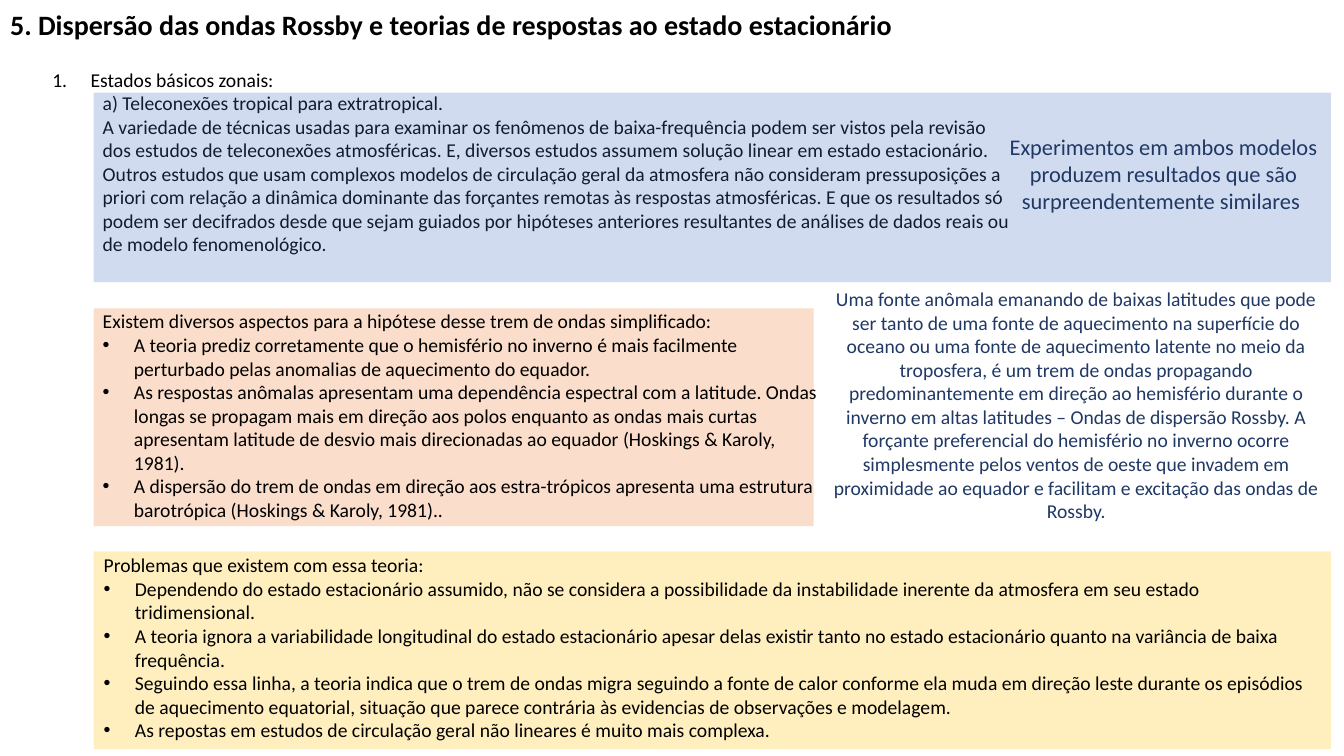
import pptx
import pptx.util
import pptx.dml.color
import pptx.enum.shapes
import pptx.enum.text
import pptx.oxml
import pptx.oxml.ns

SCALE = 9144
BLACK = "000000"
NAVY = "203864"
LEFT = pptx.enum.text.PP_ALIGN.LEFT
CENTER = pptx.enum.text.PP_ALIGN.CENTER

TITLE = "5. Dispersão das ondas Rossby e teorias de respostas ao estado estacionário"
TELECONNECTIONS = [
    "a) Teleconexões tropical para extratropical.",
    "A variedade de técnicas usadas para examinar os fenômenos de baixa-frequência podem ser vistos pela revisão dos estudos de teleconexões atmosféricas. E, diversos estudos assumem solução linear em estado estacionário.",
    "Outros estudos que usam complexos modelos de circulação geral da atmosfera não consideram pressuposições a priori com relação a dinâmica dominante das forçantes remotas às respostas atmosféricas. E que os resultados só podem ser decifrados desde que sejam guiados por hipóteses anteriores resultantes de análises de dados reais ou de modelo fenomenológico.",
]
EXPERIMENTS = "Experimentos em ambos modelos produzem resultados que são surpreendentemente similares "
SOURCE = "Uma fonte anômala emanando de baixas latitudes que pode ser tanto de uma fonte de aquecimento na superfície do oceano ou uma fonte de aquecimento latente no meio da troposfera, é um trem de ondas propagando predominantemente em direção ao hemisfério durante o inverno em altas latitudes – Ondas de dispersão Rossby. A forçante preferencial do hemisfério no inverno ocorre simplesmente pelos ventos de oeste que invadem em proximidade ao equador e facilitam e excitação das ondas de Rossby."
ASPECTS = [
    "Existem diversos aspectos para a hipótese desse trem de ondas simplificado:",
    "A teoria prediz corretamente que o hemisfério no inverno é mais facilmente perturbado pelas anomalias de aquecimento do equador.",
    "As respostas anômalas apresentam uma dependência espectral com a latitude. Ondas longas se propagam mais em direção aos polos enquanto as ondas mais curtas apresentam latitude de desvio mais direcionadas ao equador (Hoskings & Karoly, 1981).",
    "A dispersão do trem de ondas em direção aos estra-trópicos apresenta uma estrutura barotrópica (Hoskings & Karoly, 1981)..",
]
PROBLEMS = [
    "Problemas que existem com essa teoria:",
    "Dependendo do estado estacionário assumido, não se considera a possibilidade da instabilidade inerente da atmosfera em seu estado tridimensional.",
    "A teoria ignora a variabilidade longitudinal do estado estacionário apesar delas existir tanto no estado estacionário quanto na variância de baixa frequência.",
    "Seguindo essa linha, a teoria indica que o trem de ondas migra seguindo a fonte de calor conforme ela muda em direção leste durante os episódios de aquecimento equatorial, situação que parece contrária às evidencias de observações e modelagem.",
    "As repostas em estudos de circulação geral não lineares é muito mais complexa.",
]


def px(n):
    return pptx.util.Emu(n * SCALE)


def rgb(color):
    return pptx.dml.color.RGBColor.from_string(color)


def add_xml(parent, tag, **attrs):
    el = pptx.oxml.parse_xml(f"<{tag} {pptx.oxml.ns.nsdecls('a')}/>")
    for name, value in attrs.items():
        el.set(name, str(value))
    parent.append(el)


def write(p, text, size=14, color=BLACK, bold=False, align=LEFT, level=0,
          margin=0, indent=0, bullet=None):
    p.alignment = align
    p.level = level
    pPr = p._p.get_or_add_pPr()
    pPr.set("marL", str(px(margin)))
    pPr.set("indent", str(px(indent)))
    if bullet == "1.":
        add_xml(pPr, "a:buAutoNum", type="arabicPeriod")
    elif bullet:
        add_xml(pPr, "a:buFont", typeface="Arial")
        add_xml(pPr, "a:buChar", char=bullet)
    r = p.add_run()
    r.text = text
    r.font.name = "Calibri"
    r.font.size = pptx.util.Pt(size)
    r.font.bold = bold
    r.font.color.rgb = rgb(color)


def setup_frame(sp):
    tf = sp.text_frame
    tf.word_wrap = True
    tf.auto_size = pptx.enum.text.MSO_AUTO_SIZE.NONE
    tf.vertical_anchor = pptx.enum.text.MSO_ANCHOR.TOP
    return tf


def add_title(s, x, y, w, h, text):
    sp = s.shapes.title
    sp.left, sp.top, sp.width, sp.height = map(px, (x, y, w, h))
    write(setup_frame(sp).paragraphs[0], text, size=20, bold=True)


def add_text(s, x, y, w, h, items):
    tf = setup_frame(s.shapes.add_textbox(*map(px, (x, y, w, h))))
    for i, (text, fmt) in enumerate(items):
        p = tf.add_paragraph() if i else tf.paragraphs[0]
        write(p, text, **fmt)


def add_list(s, x, y, w, h, texts):
    heading = dict(level=1, margin=50)
    point = dict(level=1, margin=81, indent=-31, bullet="•")
    items = [(text, point if i else heading) for i, text in enumerate(texts)]
    add_text(s, x, y, w, h, items)


def add_panel(s, x, y, w, h, color):
    sp = s.shapes.add_shape(pptx.enum.shapes.MSO_SHAPE.RECTANGLE,
                            *map(px, (x, y, w, h)))
    sp.shadow.inherit = False
    sp.line.fill.background()
    sp.fill.solid()
    sp.fill.fore_color.rgb = rgb(color)
    clr = sp._element.spPr.find(".//" + pptx.oxml.ns.qn("a:srgbClr"))
    add_xml(clr, "a:alpha", val=25000)


def main():
    prs = pptx.Presentation()
    prs.slide_width, prs.slide_height = px(1333), px(750)
    s = prs.slides.add_slide(prs.slide_layouts[5])

    add_title(s, 0, 2, 1147, 44, TITLE)
    add_text(s, 42, 62, 971, 576,
             [("Estados básicos zonais:", dict(margin=38, indent=-38, bullet="1."))]
             + [(text, dict(level=1, margin=50)) for text in TELECONNECTIONS])

    add_panel(s, 93, 92, 1227, 188, "4472C4")
    add_panel(s, 93, 547, 1227, 196, "FFC000")
    add_panel(s, 93, 306, 714, 216, "ED7D31")

    add_text(s, 988, 127, 332, 118,
             [(EXPERIMENTS, dict(size=16, color=NAVY, align=CENTER))])
    add_text(s, 815, 280, 505, 246,
             [(SOURCE, dict(color=NAVY, align=CENTER))])
    add_list(s, 42, 302, 785, 222, ASPECTS)
    add_list(s, 43, 544, 1269, 199, PROBLEMS)

    prs.save("out.pptx")


if __name__ == "__main__":
    main()
